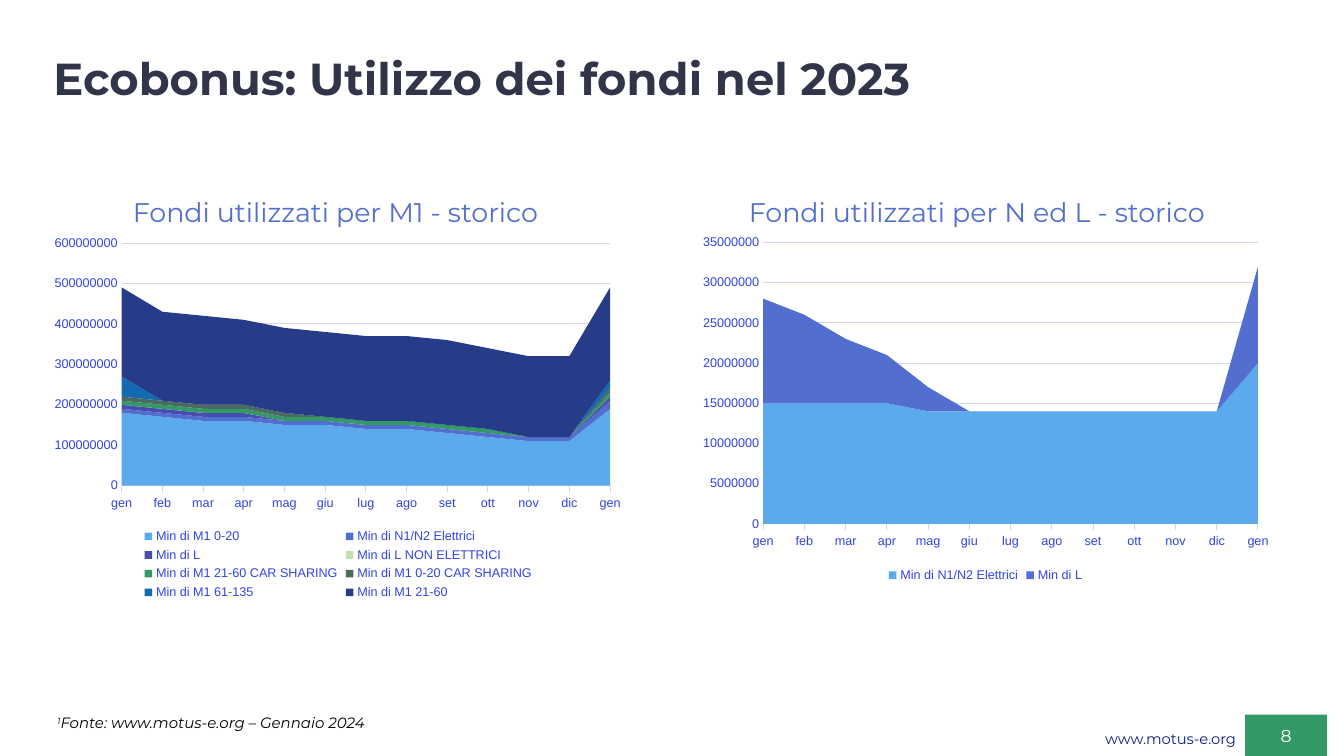
from lxml.etree import SubElement
from pptx import Presentation
from pptx.chart.data import CategoryChartData
from pptx.dml.color import RGBColor
from pptx.enum.chart import XL_CHART_TYPE, XL_LEGEND_POSITION, XL_TICK_MARK
from pptx.enum.shapes import MSO_SHAPE
from pptx.enum.text import MSO_ANCHOR, PP_ALIGN
from pptx.oxml.ns import qn
from pptx.util import Inches, Pt

WIDTH, HEIGHT = 13.33, 7.5
TITLE = "Ecobonus: Utilizzo dei fondi nel 2023"
SITE = "www.motus-e.org"
PAGE = "8"
SOURCE_MARK, SOURCE = "1", "Fonte: www.motus-e.org – Gennaio 2024"
INK, NAVY, BLUE, GREEN = "32354A", "111E86", "526ECF", "339966"
AXIS_TEXT, GRID_LINE = "3044E5", "CFD4F9"
MONTHS = ["gen", "feb", "mar", "apr", "mag", "giu", "lug",
          "ago", "set", "ott", "nov", "dic", "gen"]

# Millions of euro, month by month
M1_SERIES = [
    ("Min di M1 0-20", "5BABEC",
     [180, 170, 160, 160, 150, 150, 140, 140, 130, 120, 110, 110, 190]),
    ("Min di N1/N2 Elettrici", BLUE, [10] * 12 + [20]),
    ("Min di L", "484CB0", [10] * 4 + [0] * 8 + [10]),
    ("Min di L NON ELETTRICI", "C1E1AF", [0] * 13),
    ("Min di M1 21-60 CAR SHARING", GREEN, [10] * 10 + [0] * 2 + [10]),
    ("Min di M1 0-20 CAR SHARING", "4D6A5F", [10] * 5 + [0] * 7 + [10]),
    ("Min di M1 61-135", "146AB0", [50] + [0] * 11 + [20]),
    ("Min di M1 21-60", "263C88",
     [220, 220, 220, 210, 210, 210, 210, 210, 210, 200, 200, 200, 230]),
]
N_L_SERIES = [
    ("Min di N1/N2 Elettrici", "5BABEC", [15] * 4 + [14] * 8 + [20]),
    ("Min di L", BLUE, [13, 11, 8, 6, 3] + [0] * 7 + [12]),
]
# heading, heading left, chart left, chart height, axis top and step, plot (x, y, w, h), series
PANELS = [
    ("Fondi utilizzati per M1 - storico", 1.22, 0.43, 3.72, 600, 100,
     (0.133, 0.038, 0.828, 0.647), M1_SERIES),
    ("Fondi utilizzati per N ed L - storico", 7.33, 6.85, 3.55, 35, 5,
     (0.123, 0.038, 0.839, 0.787), N_L_SERIES),
]
HEADING_TOP, CHART_TOP, CHART_WIDTH = 1.93, 2.27, 5.85
MILLION = 1_000_000


def color(value):
    return RGBColor.from_string(value)


def set_font(font, name, size, value):
    font.name, font.size = name, Pt(size)
    font.color.rgb = color(value)


def fill_text(shape, runs, size, value, insets=(0.1, 0.05), anchor=MSO_ANCHOR.TOP,
              align=PP_ALIGN.LEFT, spacing=None):
    """Write the runs as one paragraph and return the paragraph."""
    frame = shape.text_frame
    frame.word_wrap = True
    frame.vertical_anchor = anchor
    frame.margin_left = frame.margin_right = Inches(insets[0])
    frame.margin_top = frame.margin_bottom = Inches(insets[1])
    paragraph = frame.paragraphs[0]
    paragraph.alignment = align
    if spacing:
        paragraph.line_spacing = spacing
    for text in runs:
        run = paragraph.add_run()
        run.text = text
        set_font(run.font, "Montserrat", size, value)
    return paragraph


def add_text(slide, box, runs, size, value, **options):
    shape = slide.shapes.add_textbox(*map(Inches, box))
    return fill_text(shape, runs, size, value, **options)


def place_plot(chart, shares):
    """Fix the inner plot area as shares of the chart's size."""
    plot_area = chart.plots[0]._element.getparent()
    layout = plot_area.find(qn("c:layout"))
    if layout is None:
        layout = SubElement(plot_area, qn("c:layout"))
        plot_area.insert(0, layout)
    manual = SubElement(layout, qn("c:manualLayout"))
    settings = [("layoutTarget", "inner"), ("xMode", "edge"), ("yMode", "edge")]
    settings += zip("xywh", map(str, shares))
    for tag, value in settings:
        SubElement(manual, qn("c:" + tag)).set("val", value)


def add_area_chart(slide, left, height, top_value, step, plot_shares, series):
    data = CategoryChartData(number_format="0")
    data.categories = MONTHS
    for name, _, millions in series:
        data.add_series(name, [value * MILLION for value in millions])
    box = map(Inches, (left, CHART_TOP, CHART_WIDTH, height))
    chart = slide.shapes.add_chart(XL_CHART_TYPE.AREA_STACKED, *box, data).chart
    set_font(chart.font, "Arial", 10, NAVY)
    chart.has_title = False
    chart.has_legend = True
    chart.legend.position = XL_LEGEND_POSITION.BOTTOM
    chart.legend.include_in_layout = False
    set_font(chart.legend.font, "Arial", 9, AXIS_TEXT)

    plot = chart.plots[0]
    plot.vary_by_categories = False
    for area, (_, fill, _) in zip(plot.series, series):
        area.format.fill.solid()
        area.format.fill.fore_color.rgb = color(fill)
        area.format.line.fill.background()

    months, euros = chart.category_axis, chart.value_axis
    for axis, tick in ((months, XL_TICK_MARK.OUTSIDE), (euros, XL_TICK_MARK.NONE)):
        axis.major_tick_mark, axis.minor_tick_mark = tick, XL_TICK_MARK.NONE
        set_font(axis.tick_labels.font, "Arial", 9, AXIS_TEXT)
    months.has_major_gridlines = False
    euros.has_major_gridlines = True
    for line in (months.format.line, euros.major_gridlines.format.line):
        line.color.rgb, line.width = color(GRID_LINE), Pt(0.75)
    euros.format.line.fill.background()
    euros.minimum_scale, euros.maximum_scale = 0, top_value * MILLION
    euros.major_unit = step * MILLION
    euros.tick_labels.number_format = "0"
    euros.tick_labels.number_format_is_linked = False
    for between in euros._element.findall(qn("c:crossBetween")):
        between.set("val", "midCat")
    place_plot(chart, plot_shares)


def main():
    deck = Presentation()
    deck.slide_width, deck.slide_height = Inches(WIDTH), Inches(HEIGHT)
    slide = deck.slides.add_slide(deck.slide_layouts[6])

    add_text(slide, (6.9, 7.15, 5.45, 0.36), [SITE], 10.5, NAVY, insets=(0.09, 0.04),
             anchor=MSO_ANCHOR.MIDDLE, align=PP_ALIGN.RIGHT)
    badge = slide.shapes.add_shape(
        MSO_SHAPE.RECTANGLE, *map(Inches, (12.35, 7.09, 0.81, 0.41)))
    badge.shadow.inherit = False
    badge.fill.solid()
    badge.fill.fore_color.rgb = color(GREEN)
    badge.line.fill.background()
    fill_text(badge, [PAGE], 12.3, "FFFFFF", anchor=MSO_ANCHOR.MIDDLE,
              align=PP_ALIGN.CENTER)

    title = add_text(slide, (0.43, 0.46, 12.48, 0.69), [TITLE], 32, INK,
                     insets=(0.1, 0.1), spacing=0.9)
    title.runs[0].font.bold = True

    for heading, heading_left, *chart_parts in PANELS:
        add_text(slide, (heading_left, HEADING_TOP, 6.1, 0.68), [heading], 19.2, BLUE,
                 spacing=0.9)
        add_area_chart(slide, *chart_parts)

    source = add_text(slide, (0.57, 7.08, 3.41, 0.18), [SOURCE_MARK, SOURCE], 10.7,
                      "000000", insets=(0, 0))
    for run in source.runs:
        run.font.italic = True
    source.runs[0].font._element.set("baseline", "30000")

    deck.save("out.pptx")


if __name__ == "__main__":
    main()
